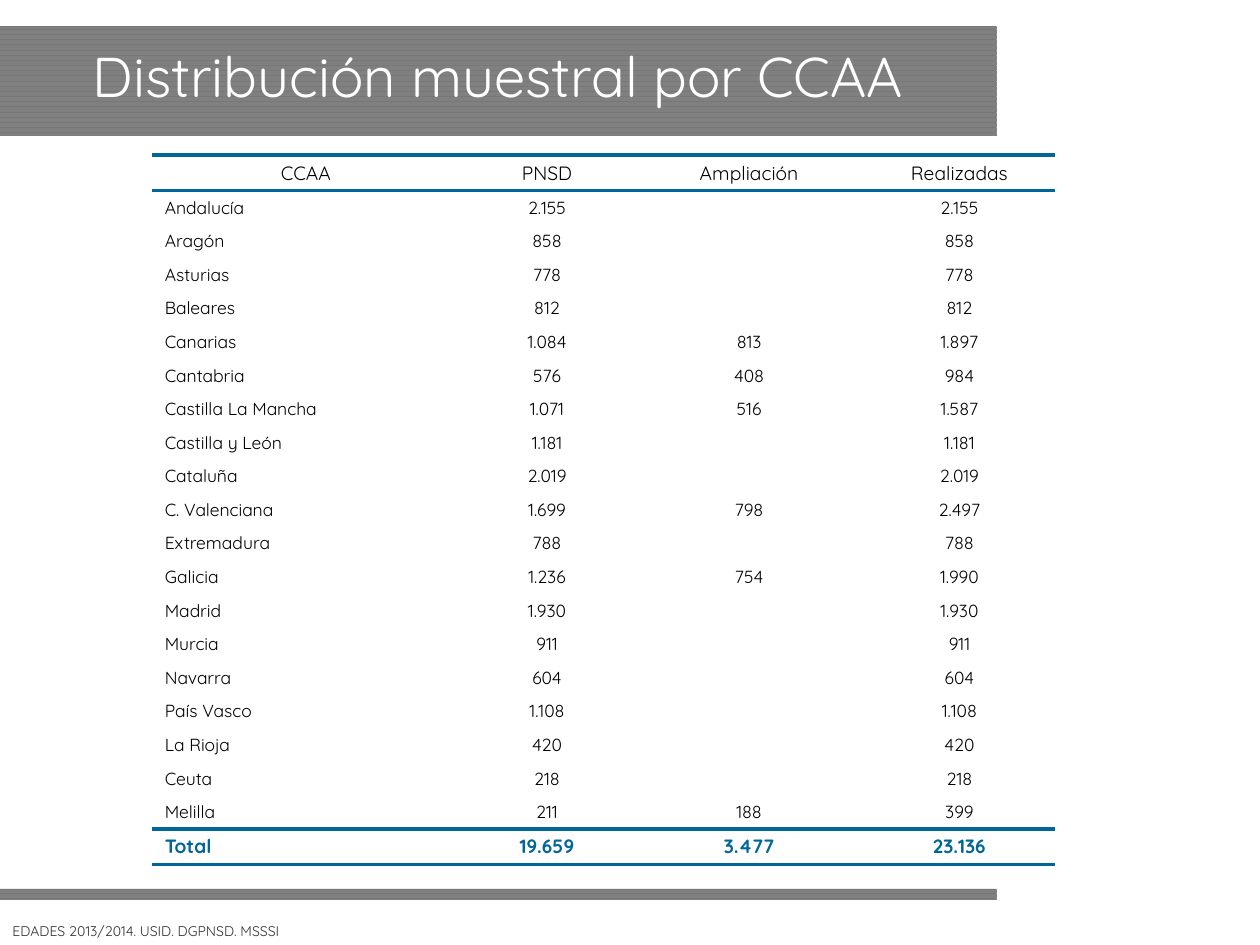
from lxml.etree import SubElement as Sub
from pptx import Presentation
from pptx.dml.color import RGBColor as RGB
from pptx.enum.dml import MSO_PATTERN as Pat
from pptx.enum.shapes import MSO_SHAPE as Shape
from pptx.enum.text import MSO_ANCHOR as Anchor, MSO_AUTO_SIZE as Auto, PP_ALIGN as Align
from pptx.oxml.ns import qn
from pptx.util import Pt

BLACK = RGB(0x00, 0x00, 0x00)
WHITE = RGB(0xFF, 0xFF, 0xFF)
BLUE = RGB(0x00, 0x66, 0x99)
GRAY = RGB(0x80, 0x80, 0x80)
SHADE = RGB(0x77, 0x77, 0x77)
DARK = RGB(0x33, 0x33, 0x33)
FONT = "Quicksand"

HEAD = ["CCAA", "PNSD", "Ampliación", "Realizadas"]
DATA = [
    ["Andalucía", "2.155", "", "2.155"],
    ["Aragón", "858", "", "858"],
    ["Asturias", "778", "", "778"],
    ["Baleares", "812", "", "812"],
    ["Canarias", "1.084", "813", "1.897"],
    ["Cantabria", "576", "408", "984"],
    ["Castilla La Mancha", "1.071", "516", "1.587"],
    ["Castilla y León", "1.181", "", "1.181"],
    ["Cataluña", "2.019", "", "2.019"],
    ["C. Valenciana", "1.699", "798", "2.497"],
    ["Extremadura", "788", "", "788"],
    ["Galicia", "1.236", "754", "1.990"],
    ["Madrid", "1.930", "", "1.930"],
    ["Murcia", "911", "", "911"],
    ["Navarra", "604", "", "604"],
    ["País Vasco", "1.108", "", "1.108"],
    ["La Rioja", "420", "", "420"],
    ["Ceuta", "218", "", "218"],
    ["Melilla", "211", "188", "399"],
]
TOTAL = ["Total", "19.659", "3.477", "23.136"]


def write(frame, text, size=10, color=BLACK, bold=False, align=Align.LEFT):
    """Put one formatted line of text in a frame."""
    para = frame.paragraphs[0]
    para.alignment = align
    if not text:
        # An empty cell keeps the row height through its end mark
        Sub(para._p, qn("a:endParaRPr"), sz=str(size * 100))
        return
    run = para.add_run()
    run.text = text
    font = run.font
    font.name, font.size, font.bold = FONT, Pt(size), bold
    font.color.rgb = color


def edge(cell, side, color=None, width=2.25):
    """Draw one cell border, or clear it when no color is given."""
    props = cell._tc.get_or_add_tcPr()
    line = Sub(props, qn("a:ln" + side), w=str(Pt(width)))
    if color is None:
        Sub(line, qn("a:noFill"))
    else:
        fill = Sub(line, qn("a:solidFill"))
        Sub(fill, qn("a:srgbClr"), val=str(color))


class Deck:
    """Style and current slide."""

    def __init__(self, wide, high):
        self.prs = Presentation()
        self.prs.slide_width, self.prs.slide_height = Pt(wide), Pt(high)
        self.slide = self.prs.slides.add_slide(self.prs.slide_layouts[6])

    def band(self, *box):
        bar = self.slide.shapes.add_shape(Shape.RECTANGLE, *map(Pt, box))
        bar.shadow.inherit = False
        bar.line.fill.background()
        bar.fill.patterned()
        bar.fill.pattern = Pat.DARK_HORIZONTAL
        bar.fill.fore_color.rgb = GRAY
        bar.fill.back_color.rgb = SHADE

    def label(self, text, *box, wrap=True, **style):
        frame = self.slide.shapes.add_textbox(*map(Pt, box)).text_frame
        frame.word_wrap = wrap
        frame.auto_size = Auto.SHAPE_TO_FIT_TEXT
        write(frame, text, **style)

    def table(self, rows, left, top, cols, highs):
        size = Pt(sum(cols)), Pt(sum(highs))
        grid = self.slide.shapes.add_table(
            len(rows), len(cols), Pt(left), Pt(top), *size).table
        grid.first_row = grid.horz_banding = False
        for col, wide in zip(grid.columns, cols):
            col.width = Pt(wide)
        for row, high in zip(grid.rows, highs):
            row.height = Pt(high)
        last = len(rows) - 1
        for i, row in enumerate(rows):
            for j, text in enumerate(row):
                cell = grid.cell(i, j)
                cell.margin_top = cell.margin_bottom = Pt(3.3)
                cell.vertical_anchor = Anchor.BOTTOM
                # Rules frame the header and the total rows
                edge(cell, "L")
                edge(cell, "R")
                edge(cell, "T", BLUE if i in (0, 1, last) else None)
                edge(cell, "B", BLUE if i in (0, last - 1, last) else None)
                cell.fill.background()
                write(cell.text_frame, text,
                      size=11 if i in (0, last) else 10,
                      color=BLUE if i == last else BLACK,
                      bold=i == last,
                      align=Align.CENTER if i == 0 or j else Align.LEFT)

    def save(self):
        self.prs.save("out.pptx")


def main():
    deck = Deck(720, 540)
    # Title and bottom bands
    deck.band(0, 15, 569.6, 62.6)
    deck.band(0, 508, 569.6, 6)
    deck.label("Distribución muestral por CCAA", 0, 20, 569.6, 47.2,
               size=32, color=WHITE, align=Align.CENTER)
    # Sample by region
    deck.table([HEAD, *DATA, TOTAL], 87, 88.6, [175.6, 100, 131, 109.4],
               [20.4, *[19.2] * len(DATA), 20.4])
    # Source line
    deck.label("EDADES 2013/2014. USID. DGPNSD. MSSSI", 0, 523.4, 172.8, 17.2,
               wrap=False, size=8, color=DARK)
    deck.save()


if __name__ == "__main__":
    main()
